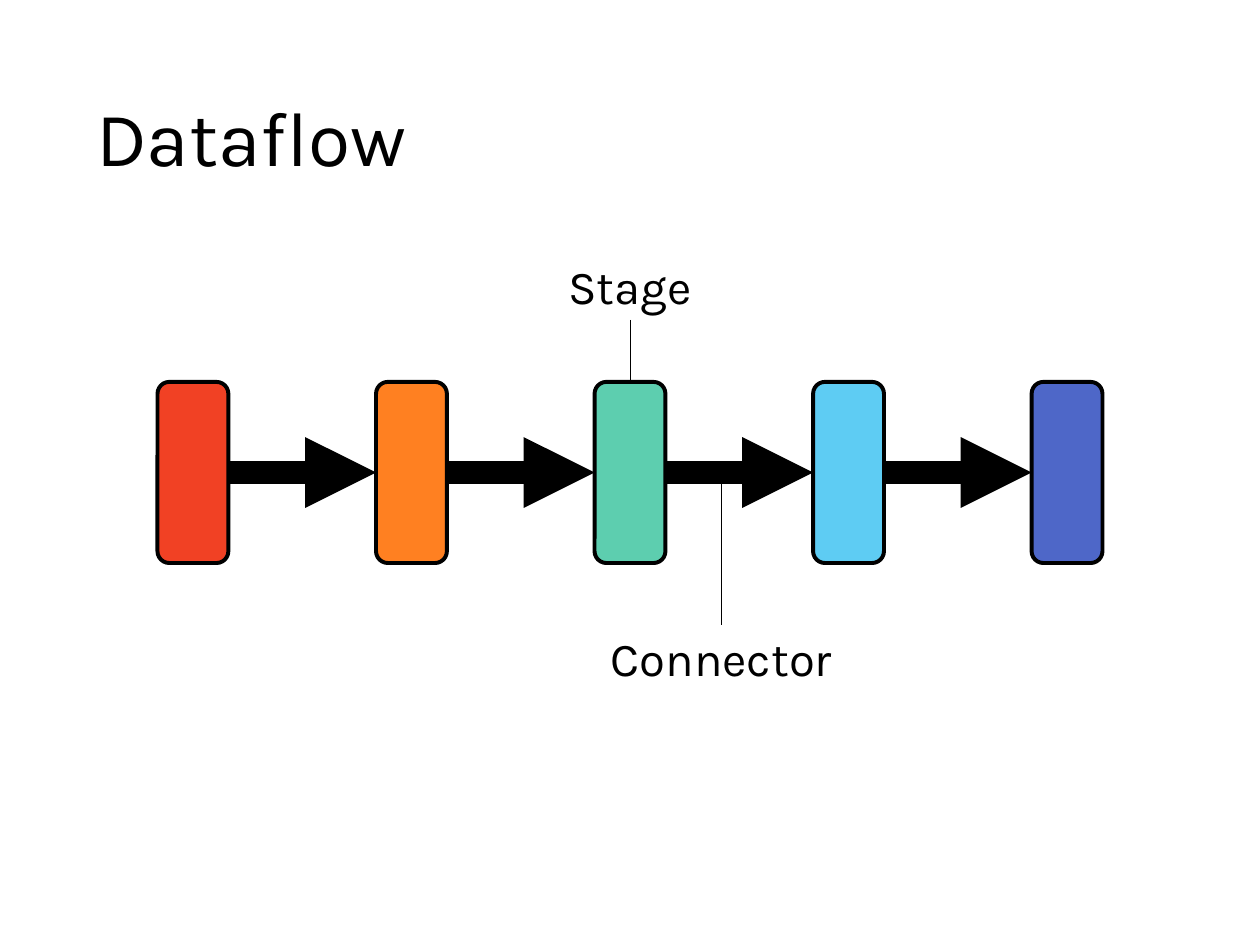
from pptx import Presentation
from pptx.dml.color import RGBColor
from pptx.enum.shapes import MSO_CONNECTOR, MSO_SHAPE
from pptx.enum.text import MSO_ANCHOR, MSO_AUTO_SIZE, PP_ALIGN
from pptx.oxml.ns import qn
from pptx.util import Pt
from lxml.etree import SubElement

PX = 9525  # EMU per px, 96 px to the inch
COLORS = {
    "black": "000000",
    "red": "F14124",
    "orange": "FF8021",
    "green": "5DCEAF",
    "sky": "5ECCF3",
    "blue": "4E67C8",
}
STAGE_COLORS = ["red", "orange", "green", "sky", "blue"]
STAGE_LEFT, STAGE_TOP, STAGE_WIDTH, STAGE_HEIGHT, STAGE_STEP = 160, 388, 72, 184, 222
FLOW_Y = STAGE_TOP + STAGE_HEIGHT // 2
LABEL_WIDTH, LABEL_HEIGHT = 410, 68
BLACK = RGBColor.from_string(COLORS["black"])


def format_text(shape, text, size, alignment):
    shape.text_frame.text = text
    shape.text_frame.word_wrap = True
    paragraph = shape.text_frame.paragraphs[0]
    paragraph.alignment = alignment
    font = paragraph.runs[0].font
    font.name, font.size, font.color.rgb = "Karla", Pt(size), BLACK
    return paragraph


def add_line(x1, y1, x2, y2, width):
    line = slide.shapes.add_connector(
        MSO_CONNECTOR.STRAIGHT, x1 * PX, y1 * PX, x2 * PX, y2 * PX)
    line.line.color.rgb = BLACK
    line.line.width = Pt(width)
    SubElement(line._element.spPr, qn("a:effectLst"))
    return line


presentation = Presentation()
presentation.slide_width, presentation.slide_height = 1280 * PX, 960 * PX
slide = presentation.slides.add_slide(presentation.slide_layouts[5])

# Title
title = slide.shapes.title
title.left, title.top, title.width, title.height = 88 * PX, 51 * PX, 1104 * PX, 185 * PX
paragraph = format_text(title, "Dataflow", 58.7, PP_ALIGN.LEFT)
paragraph.line_spacing = 0.9
title.text_frame.vertical_anchor = MSO_ANCHOR.MIDDLE
title.text_frame.auto_size = MSO_AUTO_SIZE.NONE

# Stages
stages = []
for index, color in enumerate(STAGE_COLORS):
    stage = slide.shapes.add_shape(
        MSO_SHAPE.ROUNDED_RECTANGLE, (STAGE_LEFT + index * STAGE_STEP) * PX,
        STAGE_TOP * PX, STAGE_WIDTH * PX, STAGE_HEIGHT * PX)
    stage.shadow.inherit = False
    stage.fill.solid()
    stage.fill.fore_color.rgb = RGBColor.from_string(COLORS[color])
    stage.line.color.rgb = BLACK
    stage.line.width = Pt(3)
    stages.append(stage)

# Arrows between neighbouring stages
for index, (source, target) in enumerate(zip(stages, stages[1:])):
    start = STAGE_LEFT + index * STAGE_STEP + STAGE_WIDTH
    arrow = add_line(start, FLOW_Y, start + STAGE_STEP - STAGE_WIDTH, FLOW_Y, 18)
    arrow.begin_connect(source, 3)
    arrow.end_connect(target, 1)
    SubElement(arrow.line._get_or_add_ln(), qn("a:tailEnd"), type="triangle")

# Labels, centred on their leader lines
for text, center, top in [("Stage", 640, 257), ("Connector", 733, 635)]:
    label = slide.shapes.add_textbox(
        (center - LABEL_WIDTH // 2) * PX, top * PX, LABEL_WIDTH * PX, LABEL_HEIGHT * PX)
    format_text(label, text, 36, PP_ALIGN.CENTER)
    label.text_frame.auto_size = MSO_AUTO_SIZE.SHAPE_TO_FIT_TEXT

# Leader lines
stage_leader = add_line(640, 257 + LABEL_HEIGHT, 640, STAGE_TOP, 0.5)
stage_leader.end_connect(stages[2], 0)
add_line(733, FLOW_Y, 733, 635, 0.5)

presentation.save("out.pptx")
